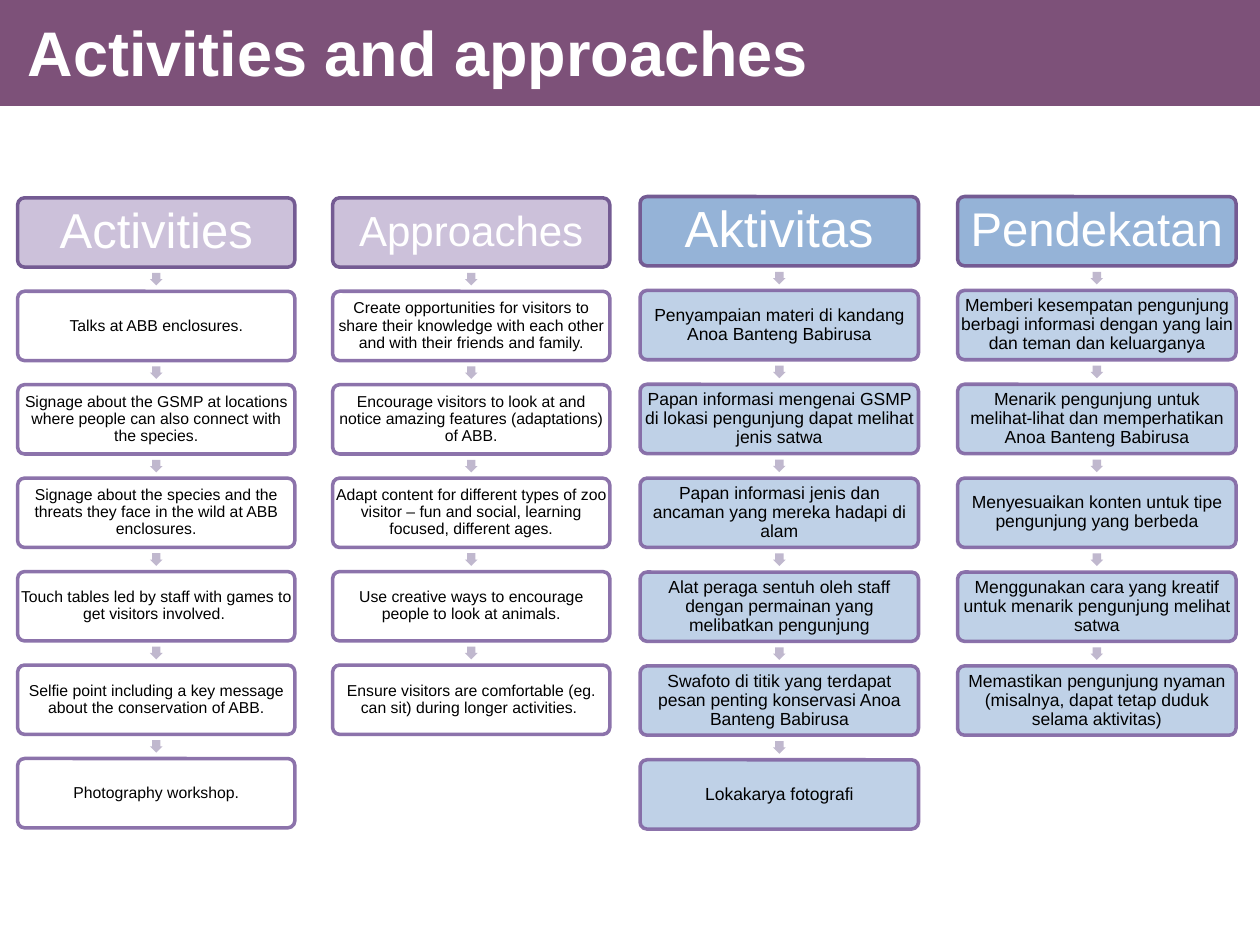
from lxml import etree
from pptx import Presentation
from pptx.dml.color import RGBColor
from pptx.enum.shapes import MSO_SHAPE
from pptx.enum.text import MSO_ANCHOR, PP_ALIGN
from pptx.oxml.ns import qn
from pptx.util import Inches, Pt

RECTANGLE = MSO_SHAPE.RECTANGLE
ROUNDED = MSO_SHAPE.ROUNDED_RECTANGLE
ARROW = MSO_SHAPE.RIGHT_ARROW
MIDDLE = MSO_ANCHOR.MIDDLE
CENTER = PP_ALIGN.CENTER

WHITE = RGBColor(0xFF, 0xFF, 0xFF)
BLACK = RGBColor(0x00, 0x00, 0x00)
PLUM = RGBColor(0x7D, 0x51, 0x79)
LILAC = RGBColor(0xCC, 0xC1, 0xDA)
BLUE = RGBColor(0x95, 0xB3, 0xD7)
PALE_BLUE = RGBColor(0xB9, 0xCD, 0xE5)
HEADER_LINE = RGBColor(0x74, 0x5B, 0x93)
STEP_LINE = RGBColor(0x80, 0x64, 0xA2)
ARROW_FILL = RGBColor(0xC0, 0xB8, 0xCE)

FONT = "Arial"
ROWS = 7
BOX_HEIGHT = 0.55
ARROW_SIZE = 0.1

ENGLISH = [
    ("Activities", 28, 0.04, [
        "Talks at ABB enclosures.",
        "Signage about the GSMP at locations where people can also connect with the species.",
        "Signage about the species and the threats they face in the wild at ABB enclosures.",
        "Touch tables led by staff with games to get visitors involved. ",
        "Selfie point including a key message about the conservation of ABB.",
        "Photography workshop.",
    ]),
    ("Approaches", 24, 0.03, [
        "Create opportunities for visitors to share their knowledge with each other "
        "and with their friends and family.",
        "Encourage visitors to look at and notice amazing features (adaptations) of ABB.",
        "Adapt content for different types of zoo visitor – fun and social, "
        "learning focused, different ages.",
        "Use creative ways to encourage people to look at animals.",
        "Ensure visitors are comfortable (eg. can sit) during longer activities. ",
    ]),
]
INDONESIAN = [
    ("Aktivitas", 29, 0.04, [
        "Penyampaian materi di kandang Anoa Banteng Babirusa",
        "Papan informasi mengenai GSMP di lokasi pengunjung dapat melihat jenis satwa",
        "Papan informasi jenis dan ancaman yang mereka hadapi di alam",
        "Alat peraga sentuh oleh staff dengan permainan yang melibatkan pengunjung",
        "Swafoto di titik yang terdapat pesan penting konservasi Anoa Banteng Babirusa",
        "Lokakarya fotografi",
    ]),
    ("Pendekatan", 27, 0.04, [
        "Memberi kesempatan pengunjung berbagi informasi dengan yang lain "
        "dan teman dan keluarganya",
        "Menarik pengunjung untuk melihat-lihat dan memperhatikan Anoa Banteng Babirusa",
        "Menyesuaikan konten untuk tipe pengunjung yang berbeda",
        "Menggunakan cara yang kreatif untuk menarik pengunjung melihat satwa",
        "Memastikan pengunjung nyaman (misalnya, dapat tetap duduk selama aktivitas)",
    ]),
]


def add_shape(page, kind, box, fill):
    shape = page.shapes.add_shape(kind, *(Inches(length) for length in box))
    shape.shadow.inherit = False
    shape.fill.solid()
    shape.fill.fore_color.rgb = fill
    shape.line.fill.background()
    return shape


def set_text(shape, text, size, color, inset):
    frame = shape.text_frame
    frame.word_wrap = True
    frame.vertical_anchor = MIDDLE
    frame.margin_left = frame.margin_right = Inches(inset)
    frame.margin_top = frame.margin_bottom = Inches(inset)
    frame.text = text
    para = frame.paragraphs[0]
    span = para.runs[0]
    span.font.name = FONT
    span.font.size = Pt(size)
    span.font.color.rgb = color
    return para


def make_translucent(shape):
    for color in shape.element.spPr.iter(qn("a:srgbClr")):
        etree.SubElement(color, qn("a:alpha")).set("val", "90000")


def add_card(page, box, text, size, inset, fill, line, color):
    card = add_shape(page, ROUNDED, box, fill)
    card.adjustments[0] = 0.1
    card.line.color.rgb = line
    card.line.width = Pt(2)
    para = set_text(card, text, size, color, inset)
    para.alignment = CENTER
    para.line_spacing = 0.9
    return card


def add_arrow(page, center_x, center_y):
    box = (center_x - ARROW_SIZE / 2, center_y - ARROW_SIZE / 2, ARROW_SIZE, ARROW_SIZE)
    arrow = add_shape(page, ARROW, box, ARROW_FILL)
    arrow.adjustments[0] = 0.667
    arrow.rotation = 90


def add_column(page, box, column, header_fill, step_fill, step_size):
    left, top, width, height = box
    title, title_size, title_inset, steps = column
    pitch = (height - BOX_HEIGHT) / (ROWS - 1)
    add_card(page, (left, top, width, BOX_HEIGHT), title, title_size, title_inset,
             header_fill, HEADER_LINE, WHITE)
    for row, step in enumerate(steps, start=1):
        step_top = top + row * pitch
        add_arrow(page, left + width / 2, step_top - (pitch - BOX_HEIGHT) / 2)
        card = add_card(page, (left, step_top, width, BOX_HEIGHT), step, step_size, 0.01,
                        step_fill, STEP_LINE, BLACK)
        make_translucent(card)


def add_panel(page, box, columns, column_width, *style):
    left, top, width, height = box
    pitch = (width - column_width) / (len(columns) - 1)
    for index, column in enumerate(columns):
        add_column(page, (left + index * pitch, top, column_width, height), column, *style)


def add_banner(page, box, title):
    left, top, width, height = box
    add_shape(page, RECTANGLE, box, PLUM)
    title_box = page.shapes.add_textbox(
        Inches(left + 0.12), Inches(top + 0.05), Inches(7.72), Inches(height - 0.13))
    para = set_text(title_box, title, 36, WHITE, 0.05)
    title_box.text_frame.margin_left = title_box.text_frame.margin_right = Inches(0.1)
    para.runs[0].font.bold = True


def main():
    deck = Presentation()
    deck.slide_width = Inches(10)
    deck.slide_height = Inches(7.5)
    page = deck.slides.add_slide(deck.slide_layouts[6])
    add_banner(page, (0, 0, 10, 0.84), "Activities and approaches")
    add_panel(page, (0.14, 1.57, 4.7, 5), ENGLISH, 2.2, LILAC, WHITE, 9)
    add_panel(page, (5.08, 1.56, 4.73, 5.02), INDONESIAN, 2.21, BLUE, PALE_BLUE, 10)
    deck.save("out.pptx")


if __name__ == "__main__":
    main()
